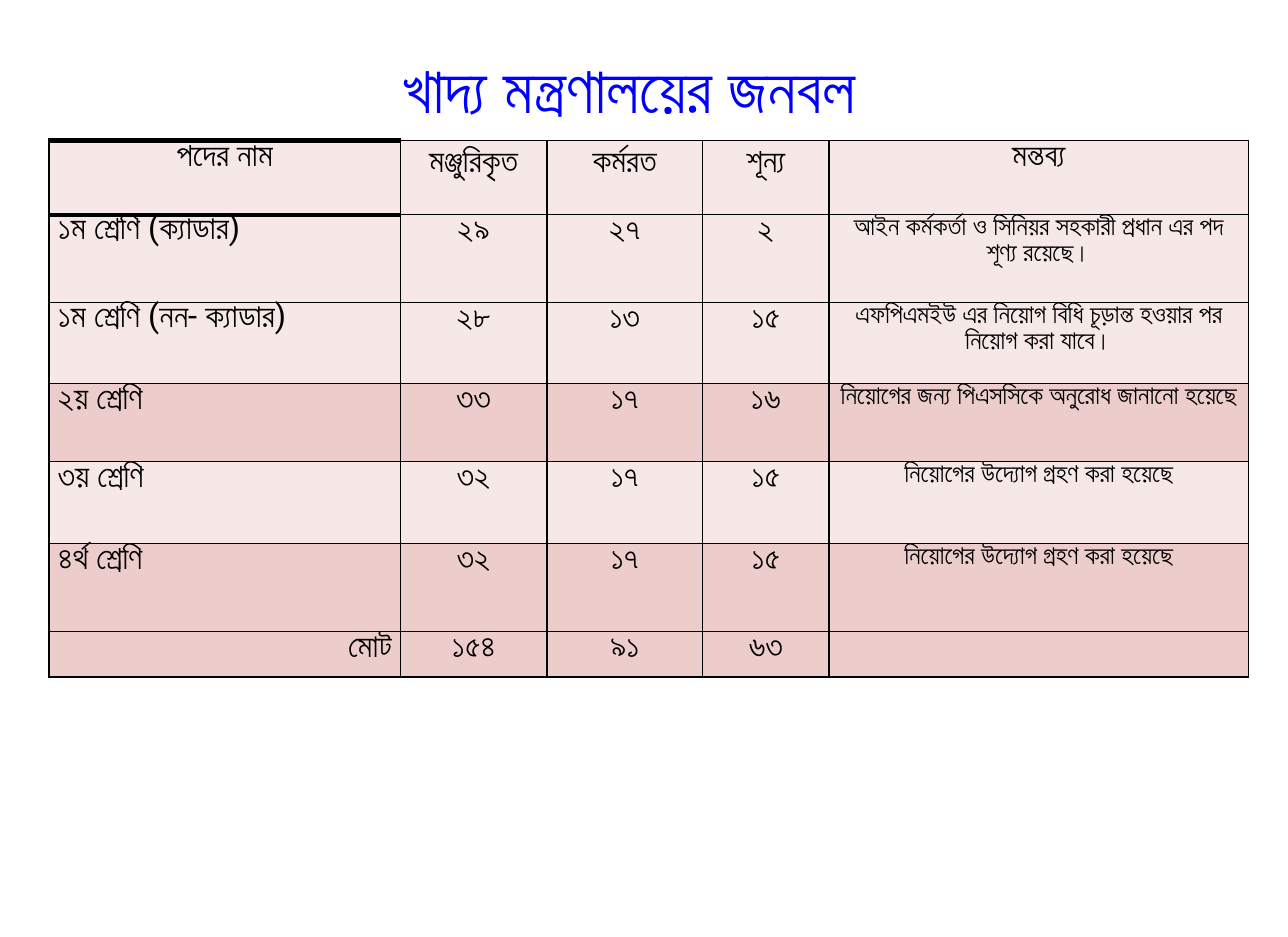
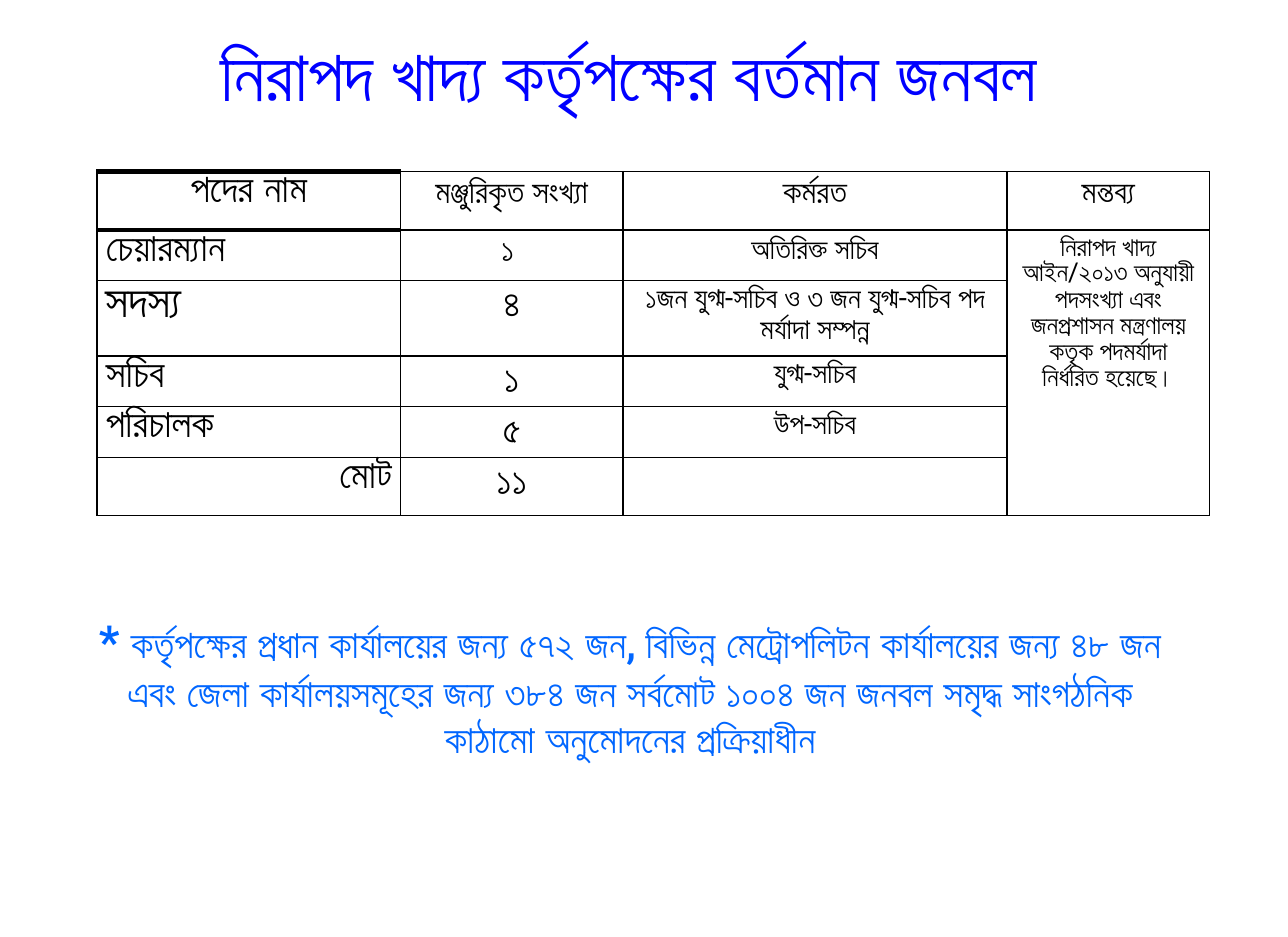
import dataclasses
import typing

import pptx
import pptx.dml.color
import pptx.enum.text
import pptx.oxml
import pptx.oxml.ns
import pptx.util

Pt = pptx.util.Pt
RGB = pptx.dml.color.RGBColor
ALIGN = pptx.enum.text.PP_ALIGN
ANCHOR = pptx.enum.text.MSO_ANCHOR


# Shared look
@dataclasses.dataclass(frozen=True)
class Theme:
    font: str = "Roboto"
    title: str = "0000FF"
    note: str = "0066FF"
    ink: str = "000000"
    white: str = "FFFFFF"
    pale: str = "F6E8E7"
    rose: str = "ECCDCB"
    head_size: float = 20
    remark_size: float = 16
    note_size: float = 24
    star_size: float = 28
    thin: float = 1
    thick: float = 3


THEME = Theme()


class Box(typing.NamedTuple):
    left: float
    top: float
    width: float
    height: float


class Cell(typing.NamedTuple):
    text: str
    size: float = THEME.head_size
    align: ALIGN = ALIGN.CENTER
    padded: bool = False
    bold: bool = False


@dataclasses.dataclass(frozen=True)
class Grid:
    left: float
    top: float
    widths: list[float]
    heights: list[float]
    rows: list[list[Cell]]
    fills: list[str]


def style(p, size: float, color: str, align: ALIGN, bold: bool = False) -> None:
    p.alignment = align
    p.font.name = THEME.font
    p.font.size = Pt(size)
    p.font.bold = bold
    p.font.color.rgb = RGB.from_string(color)


def add_text(slide, box: Box, runs: list[tuple[str, float]], color: str,
             bold: bool = False) -> None:
    sp = slide.shapes.add_textbox(*map(Pt, box))
    tf = sp.text_frame
    tf.word_wrap = True
    tf.vertical_anchor = ANCHOR.MIDDLE
    tf.margin_left = tf.margin_right = Pt(7.92)
    p = tf.paragraphs[0]
    style(p, runs[-1][1], color, ALIGN.CENTER, bold)
    for text, size in runs:
        r = p.add_run()
        r.text = text
        if size != runs[-1][1]:
            r.font.size = Pt(size)


def add_title(slide, text: str, size: float, height: float) -> None:
    add_text(slide, Box(30.24, 11.52, 712.8, height), [(text, size)], THEME.title)


def set_borders(cell, top: float, bottom: float) -> None:
    tc_pr = cell._tc.get_or_add_tcPr()
    sides = {"L": THEME.thin, "R": THEME.thin, "T": top, "B": bottom}
    for i, (side, width) in enumerate(sides.items()):
        tc_pr.insert(i, pptx.oxml.parse_xml(
            f'<a:ln{side} {pptx.oxml.ns.nsdecls("a")} w="{Pt(width)}"><a:solidFill>'
            f'<a:srgbClr val="{THEME.ink}"/></a:solidFill></a:ln{side}>'))


def fill_cell(cell, item: Cell) -> None:
    cell.margin_left = cell.margin_right = Pt(7.2 if item.padded else 5.4)
    cell.margin_top = cell.margin_bottom = Pt(3.6 if item.padded else 0)
    cell.vertical_anchor = ANCHOR.TOP
    p = cell.text_frame.paragraphs[0]
    style(p, item.size, THEME.ink, item.align, item.bold)
    p.line_spacing = Pt(item.size)
    if item.text:
        p.add_run().text = item.text


def add_grid(slide, grid: Grid):
    frame = slide.shapes.add_table(
        len(grid.heights), len(grid.widths), Pt(grid.left), Pt(grid.top),
        Pt(sum(grid.widths)), Pt(sum(grid.heights)))
    table = frame.table
    table.first_row = table.horz_banding = False
    for column, width in zip(table.columns, grid.widths):
        column.width = Pt(width)
    for y, (row, height) in enumerate(zip(table.rows, grid.heights)):
        row.height = Pt(height)
        for x, cell in enumerate(row.cells):
            # Heavy rules frame the first heading only
            top = THEME.thick if x == 0 and y < 2 else THEME.thin
            bottom = THEME.thick if x == y == 0 else THEME.thin
            set_borders(cell, top, bottom)
            cell.fill.solid()
            cell.fill.fore_color.rgb = RGB.from_string(grid.fills[y])
            if x < len(grid.rows[y]):
                fill_cell(cell, grid.rows[y][x])
    return table


# Slide 1: ministry staff
def ministry_row(label: str, counts: str, remark: str,
                 align: ALIGN = ALIGN.LEFT) -> list[Cell]:
    return [Cell(label, align=align), *map(Cell, counts.split()),
            Cell(remark, THEME.remark_size)]


def build_ministry(slide) -> None:
    add_title(slide, "খাদ্য মন্ত্রণালয়ের জনবল", 40, 85)
    effort = "নিয়োগের উদ্যোগ গ্রহণ করা হয়েছে"
    rows = [
        [Cell("পদের নাম"),
         *(Cell(t, padded=True) for t in ("মঞ্জুরিকৃত", "কর্মরত", "শূন্য")),
         Cell("মন্তব্য")],
        ministry_row("১ম শ্রেণি (ক্যাডার)", "২৯ ২৭ ২",
                     "আইন কর্মকর্তা ও সিনিয়র সহকারী প্রধান এর পদ শূণ্য রয়েছে।"),
        ministry_row("১ম শ্রেণি (নন- ক্যাডার)", "২৮ ১৩ ১৫",
                     "এফপিএমইউ এর নিয়োগ বিধি চূড়ান্ত হওয়ার পর নিয়োগ করা যাবে।"),
        ministry_row("২য় শ্রেণি", "৩৩ ১৭ ১৬",
                     "নিয়োগের জন্য পিএসসিকে অনুরোধ জানানো হয়েছে"),
        ministry_row("৩য় শ্রেণি", "৩২ ১৭ ১৫", effort),
        ministry_row("৪র্থ শ্রেণি", "৩২ ১৭ ১৫", effort),
        ministry_row("মোট", "১৫৪ ৯১ ৬৩", "", ALIGN.RIGHT),
    ]
    pale, rose = THEME.pale, THEME.rose
    add_grid(slide, Grid(
        30.24, 86.4, [216, 90, 95.8, 77.8, 257.8],
        [45.6, 54, 49.7, 48.2, 50.4, 54, 28], rows,
        [pale, pale, pale, rose, pale, rose, rose]))


# Slide 2: food safety authority staff
def authority_row(label: str, count: str, holder: str, label_size: float = 24,
                  count_size: float = 24, align: ALIGN = ALIGN.LEFT) -> list[Cell]:
    return [Cell(label, label_size, align), Cell(count, count_size, padded=True),
            Cell(holder, 18, padded=True)]


def build_authority(slide) -> None:
    add_title(slide, "নিরাপদ খাদ্য কর্তৃপক্ষের বর্তমান জনবল", 44, 67)
    remark = ("নিরাপদ খাদ্য আইন/২০১৩ অনুযায়ী পদসংখ্যা এবং জনপ্রশাসন মন্ত্রণালয় "
              "কতৃক পদমর্যাদা নির্ধরিত হয়েছে।")
    rows = [
        [Cell("পদের নাম", 24, bold=True),
         *(Cell(t, padded=True) for t in ("মঞ্জুরিকৃত সংখ্যা", "কর্মরত", "মন্তব্য"))],
        [*authority_row("চেয়ারম্যান", "১ ", "অতিরিক্ত সচিব", count_size=20),
         Cell(remark, THEME.remark_size, padded=True)],
        authority_row("সদস্য", "৪", "১জন যুগ্ম-সচিব ও ৩ জন যুগ্ম-সচিব পদ মর্যাদা সম্পন্ন",
                      label_size=28),
        authority_row("সচিব", "১", "যুগ্ম-সচিব"),
        authority_row("পরিচালক", "৫", "উপ-সচিব"),
        authority_row("মোট", "১১", "", align=ALIGN.RIGHT),
    ]
    table = add_grid(slide, Grid(
        59.76, 105.4, [186.5, 136.8, 236.2, 124.6],
        [36, 31.2, 46.2, 31.2, 31.2, 35.7], rows, [THEME.white] * len(rows)))
    table.cell(1, 3).merge(table.cell(5, 3))

    note = ("কর্তৃপক্ষের প্রধান কার্যালয়ের জন্য ৫৭২ জন, বিভিন্ন মেট্রোপলিটন কার্যালয়ের "
            "জন্য ৪৮ জন এবং জেলা কার্যালয়সমূহের জন্য ৩৮৪ জন সর্বমোট ১০০৪ জন জনবল "
            "সমৃদ্ধ সাংগঠনিক কাঠামো অনুমোদনের প্রক্রিয়াধীন")
    add_text(slide, Box(48.24, 365.76, 678.24, 113.76),
             [("* ", THEME.star_size), (note, THEME.note_size)], THEME.note, bold=True)


def main() -> None:
    prs = pptx.Presentation()
    prs.slide_width, prs.slide_height = Pt(792), Pt(576)
    for build in (build_ministry, build_authority):
        build(prs.slides.add_slide(prs.slide_layouts[6]))
    prs.save("out.pptx")


if __name__ == "__main__":
    main()
